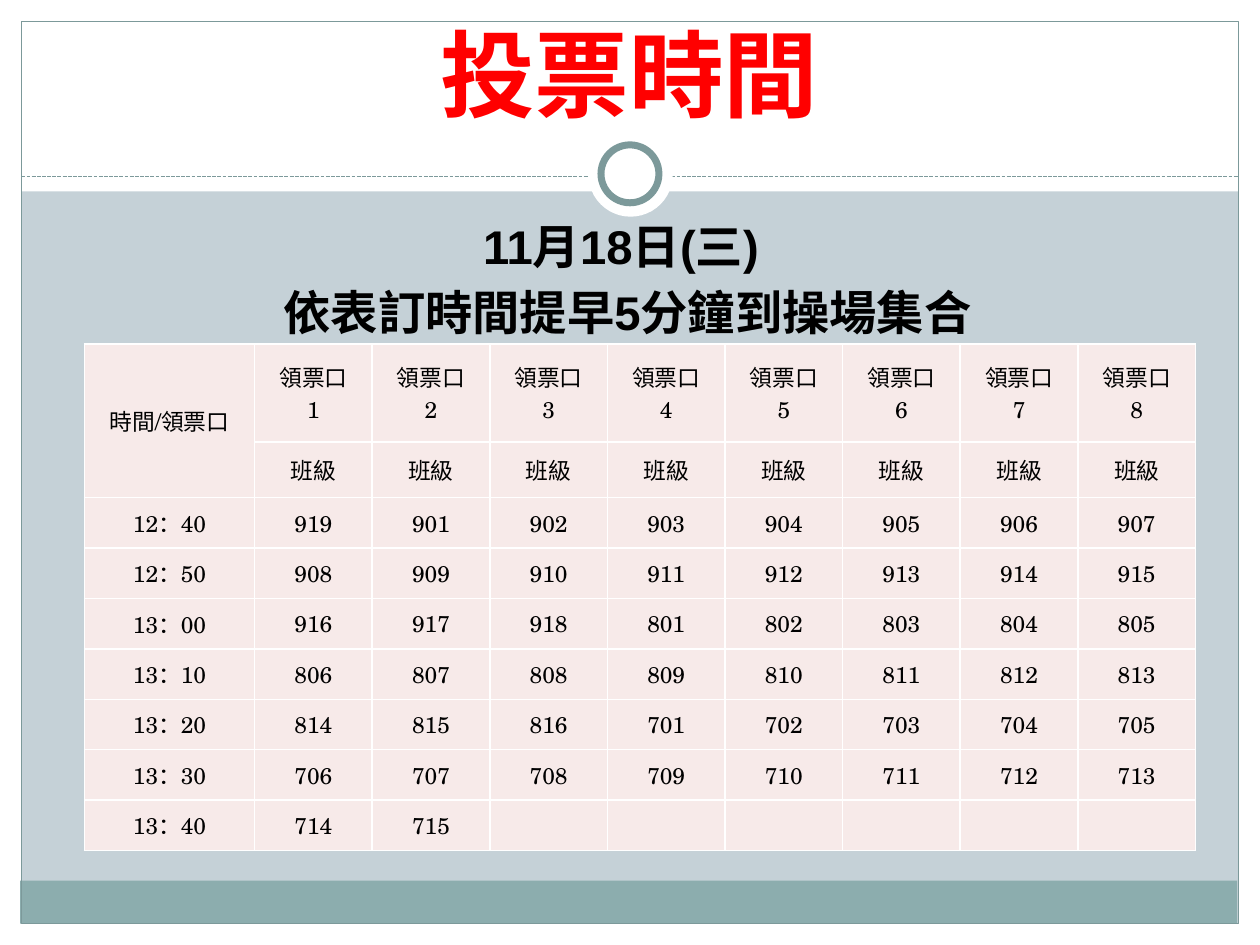
from dataclasses import dataclass
from itertools import chain

from lxml.etree import SubElement
from pptx import Presentation
from pptx.dml.color import RGBColor
from pptx.enum.dml import MSO_LINE
from pptx.enum.shapes import MSO_CONNECTOR, MSO_SHAPE
from pptx.enum.text import MSO_ANCHOR, MSO_AUTO_SIZE, PP_ALIGN
from pptx.oxml.ns import qn
from pptx.util import Inches, Pt

COLORS = {
    "background": "C5D1D7",
    "white": "FFFFFF",
    "band": "8CADAE",
    "outline": "7C999A",
    "title": "FF0000",
    "text": "000000",
    "cell": "F7EAE9",
}
SERIF = "TeX Gyre Schola"
SANS = "Arial"


@dataclass
class Panel:
    left: float
    top: float
    width: float
    height: float
    fill: str | None = "white"
    line_width: float = 0
    preset: MSO_SHAPE = MSO_SHAPE.RECTANGLE


@dataclass
class TextStyle:
    size: float
    font: str
    color: str = "text"
    bold: bool = False


PANELS = [
    Panel(0, 7.33, 10, 0.17),
    Panel(0, 0, 10, 1.52),
    Panel(0, 0, 0.17, 7.5),
    Panel(9.83, 0, 0.17, 7.5),
    Panel(0.16, 6.99, 9.66, 0.34, "band"),
    Panel(0.17, 0.17, 9.66, 7.16, None, 0.75),
]
RINGS = [
    Panel(4.67, 1.05, 0.67, 0.67, preset=MSO_SHAPE.OVAL),
    Panel(4.77, 1.15, 0.46, 0.46, line_width=4, preset=MSO_SHAPE.OVAL),
]
TITLE_STYLE = TextStyle(54, SERIF, "title", True)
BODY_STYLE = TextStyle(27, SANS, bold=True)
CELL_STYLE = TextStyle(13, SERIF)

TIMES = ["12：40", "12：50", "13：00", "13：10", "13：20", "13：30", "13：40"]
BOOTHS = 8
# Classes vote in this order, one per booth
CLASSES = list(chain([919], range(901, 919), range(801, 817), range(701, 716)))


def rgb(name: str) -> RGBColor:
    return RGBColor.from_string(COLORS[name])


def draw_panel(page, panel: Panel) -> None:
    shape = page.shapes.add_shape(
        panel.preset, Inches(panel.left), Inches(panel.top),
        Inches(panel.width), Inches(panel.height))
    shape.shadow.inherit = False
    if panel.fill:
        shape.fill.solid()
        shape.fill.fore_color.rgb = rgb(panel.fill)
    else:
        shape.fill.background()
    if panel.line_width:
        shape.line.color.rgb = rgb("outline")
        shape.line.width = Pt(panel.line_width)
    else:
        shape.line.fill.background()


def draw_divider(page) -> None:
    line = page.shapes.add_connector(
        MSO_CONNECTOR.STRAIGHT, Inches(0.17), Inches(1.4), Inches(9.83), Inches(1.4))
    line.line.color.rgb = rgb("outline")
    line.line.width = Pt(0.75)
    line.line.dash_style = MSO_LINE.SQUARE_DOT
    SubElement(line.element.spPr, qn("a:effectLst"))


def write_text(frame, text: str, style: TextStyle) -> None:
    frame.text = text
    for para in frame.paragraphs:
        para.alignment = PP_ALIGN.CENTER
        para.font.size = Pt(style.size)
        para.font.name = style.font
        para.font.bold = style.bold
        para.font.color.rgb = rgb(style.color)


def fill_placeholder(box, place: tuple, anchor: MSO_ANCHOR, text: str,
                     style: TextStyle) -> None:
    box.left, box.top, box.width, box.height = map(Inches, place)
    frame = box.text_frame
    frame.word_wrap = True
    frame.auto_size = MSO_AUTO_SIZE.NONE
    frame.vertical_anchor = anchor
    write_text(frame, text, style)
    # Bring the text in front of the background panels
    box.element.getparent().append(box.element)


def remove_bullets(frame) -> None:
    for para in frame.paragraphs:
        properties = para._p.get_or_add_pPr()
        properties.set("marL", "0")
        properties.set("indent", "0")
        properties.insert(0, properties.makeelement(qn("a:buNone"), {}))


def style_cell(cell) -> None:
    properties = cell._tc.get_or_add_tcPr()
    for side in ("lnL", "lnR", "lnT", "lnB"):
        border = SubElement(properties, qn(f"a:{side}"), w=str(Pt(1)))
        fill = SubElement(border, qn("a:solidFill"))
        SubElement(fill, qn("a:srgbClr"), val=COLORS["white"])
    cell.fill.solid()
    cell.fill.fore_color.rgb = rgb("cell")
    cell.vertical_anchor = MSO_ANCHOR.MIDDLE
    cell.margin_left = cell.margin_right = Inches(0.02)
    cell.margin_top = cell.margin_bottom = 0


def schedule_rows() -> list[list[str]]:
    rows = [
        ["時間/領票口"] + [f"領票口\n{booth}" for booth in range(1, BOOTHS + 1)],
        [""] + ["班級"] * BOOTHS,
    ]
    for index, time in enumerate(TIMES):
        group = CLASSES[index * BOOTHS:(index + 1) * BOOTHS]
        rows.append([time] + [str(name) for name in group] + [""] * (BOOTHS - len(group)))
    return rows


def draw_schedule(page) -> None:
    rows = schedule_rows()
    width, first_width = 8.82, 1.35
    table = page.shapes.add_table(
        len(rows), BOOTHS + 1, Inches(0.67), Inches(2.73),
        Inches(width), Inches(4.02)).table
    table.first_row = table.horz_banding = False
    for index, column in enumerate(table.columns):
        column.width = Inches((width - first_width) / BOOTHS if index else first_width)
    for row, height in zip(table.rows, [0.78, 0.44] + [0.4] * len(TIMES)):
        row.height = Inches(height)
    for row, values in zip(table.rows, rows):
        for cell, value in zip(row.cells, values):
            style_cell(cell)
            write_text(cell.text_frame, value, CELL_STYLE)
    table.cell(0, 0).merge(table.cell(1, 0))


def main() -> None:
    deck = Presentation()
    deck.slide_width, deck.slide_height = Inches(10), Inches(7.5)
    page = deck.slides.add_slide(deck.slide_layouts[1])
    page.background.fill.solid()
    page.background.fill.fore_color.rgb = rgb("background")

    # Frame, divider and ring
    for panel in PANELS:
        draw_panel(page, panel)
    draw_divider(page)
    for ring in RINGS:
        draw_panel(page, ring)

    # Title and announcement
    title, body = page.shapes.title, page.placeholders[1]
    fill_placeholder(title, (0.33, 0.25, 9.33, 0.83), MSO_ANCHOR.BOTTOM,
                     "投票時間", TITLE_STYLE)
    fill_placeholder(body, (0.33, 1.67, 9.3, 5), MSO_ANCHOR.TOP,
                     "11月18日(三) \n依表訂時間提早5分鐘到操場集合", BODY_STYLE)
    remove_bullets(body.text_frame)

    # Voting timetable
    draw_schedule(page)
    deck.save("out.pptx")


if __name__ == "__main__":
    main()
